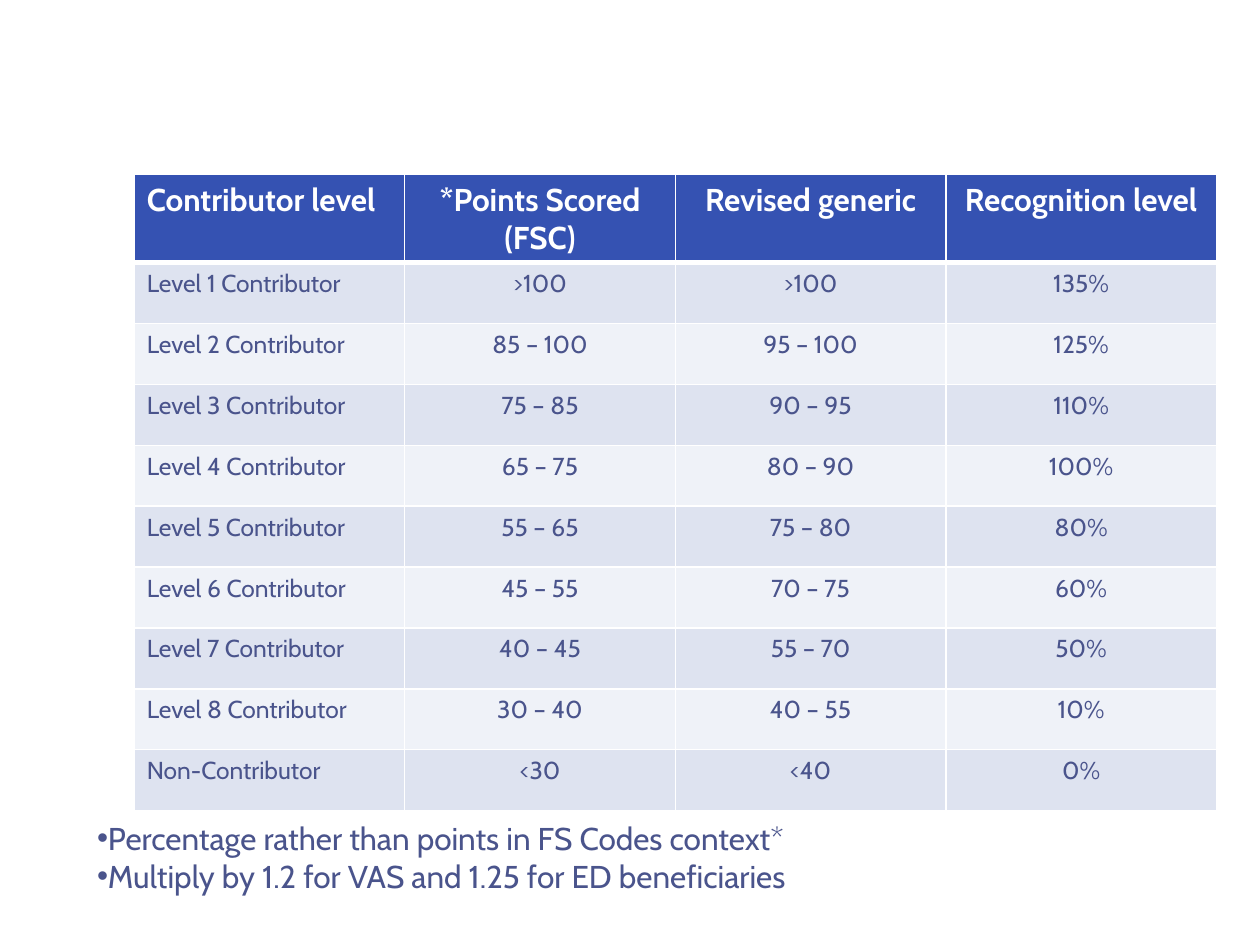
from dataclasses import dataclass

import pptx
import pptx.dml.color
import pptx.enum.text
import pptx.oxml
import pptx.oxml.ns
import pptx.util


@dataclass(frozen=True)
class Theme:
    font: str = "Cabin"
    header_fill: str = "3552B2"
    band_fills: tuple = ("DEE3F0", "EFF2F8")
    light: str = "FFFFFF"
    text: str = "4A548C"
    large: int = 18
    small: int = 14
    thin_line: int = 1
    thick_line: int = 3


HEADERS = ("Contributor level", "*Points Scored (FSC)", "Revised generic", "Recognition level")
LEVELS = (
    ("Level 1 Contributor", ">100", ">100", "135%"),
    ("Level 2 Contributor", "85 – 100", "95 – 100", "125%"),
    ("Level 3 Contributor", "75 – 85", "90 – 95", "110%"),
    ("Level 4 Contributor", "65 – 75", "80 – 90", "100%"),
    ("Level 5 Contributor", "55 – 65", "75 – 80", "80%"),
    ("Level 6 Contributor", "45 – 55", "70 – 75", "60%"),
    ("Level 7 Contributor", "40 – 45", "55 – 70", "50%"),
    ("Level 8 Contributor", "30 – 40", "40 – 55", "10%"),
    ("Non-Contributor", "<30", "<40", "0%"),
)
NOTES = (
    "Percentage rather than points in FS Codes context*",
    "Multiply by 1.2 for VAS and 1.25 for ED beneficiaries",
)


class SlideBuilder:
    """Places elements on a grid of 100 columns and 75 rows."""

    COLUMNS, ROWS = 100, 75

    def __init__(self, presentation, theme):
        self.theme = theme
        self.unit_x = presentation.slide_width / self.COLUMNS
        self.unit_y = presentation.slide_height / self.ROWS
        self.slide = presentation.slides.add_slide(presentation.slide_layouts[1])
        title = self.slide.shapes.title
        title.element.getparent().remove(title.element)

    def box(self, column, row, columns, rows):
        return (round(column * self.unit_x), round(row * self.unit_y),
                round(columns * self.unit_x), round(rows * self.unit_y))

    def style(self, paragraph, size, color, bold=False):
        paragraph.font.name = self.theme.font
        paragraph.font.size = pptx.util.Pt(size)
        paragraph.font.bold = bold
        paragraph.font.color.rgb = pptx.dml.color.RGBColor.from_string(color)

    def borders(self, cell, bottom):
        properties = cell._tc.get_or_add_tcPr()
        thin = self.theme.thin_line
        for side, width in (("L", thin), ("R", thin), ("T", thin), ("B", bottom)):
            properties.append(pptx.oxml.parse_xml(
                f'<a:ln{side} {pptx.oxml.ns.nsdecls("a")} w="{pptx.util.Pt(width)}">'
                f'<a:solidFill><a:srgbClr val="{self.theme.light}"/></a:solidFill></a:ln{side}>'))

    def cell(self, cell, text, fill, size, color, centered, header):
        theme = self.theme
        self.borders(cell, theme.thick_line if header else theme.thin_line)
        cell.fill.solid()
        cell.fill.fore_color.rgb = pptx.dml.color.RGBColor.from_string(fill)
        cell.text = text
        paragraph = cell.text_frame.paragraphs[0]
        if centered:
            paragraph.alignment = pptx.enum.text.PP_ALIGN.CENTER
        self.style(paragraph, size, color, header)

    def table(self, headers, records, area, header_rows):
        theme = self.theme
        rows = (headers, *records)
        left, top, width, height = self.box(*area)
        table = self.slide.shapes.add_table(
            len(rows), len(headers), left, top, width, height).table
        header_height = round(header_rows * self.unit_y)
        row_height = round((height - header_height) / len(records))
        for index, values in enumerate(rows):
            header = index == 0
            table.rows[index].height = header_height if header else row_height
            fill = theme.header_fill if header else theme.band_fills[(index - 1) % 2]
            size = theme.large if header else theme.small
            color = theme.light if header else theme.text
            for column, text in enumerate(values):
                self.cell(table.cell(index, column), text, fill, size, color, column > 0, header)

    def bullets(self, lines, area):
        body = self.slide.placeholders[1]
        body.left, body.top, body.width, body.height = self.box(*area)
        frame = body.text_frame
        frame.word_wrap = True
        frame.auto_size = pptx.enum.text.MSO_AUTO_SIZE.SHAPE_TO_FIT_TEXT
        frame.vertical_anchor = pptx.enum.text.MSO_ANCHOR.TOP
        frame.text = "\n".join(lines)
        for paragraph in frame.paragraphs:
            properties = paragraph._p.get_or_add_pPr()
            properties.set("marL", "0")
            properties.set("indent", "0")
            properties.append(pptx.oxml.parse_xml(
                f'<a:buChar {pptx.oxml.ns.nsdecls("a")} char="•"/>'))
            paragraph.space_before = pptx.util.Pt(0)
            self.style(paragraph, self.theme.large, self.theme.text)


def main():
    presentation = pptx.Presentation()
    presentation.slide_width = pptx.util.Inches(10)
    presentation.slide_height = pptx.util.Inches(7.5)
    builder = SlideBuilder(presentation, Theme())
    builder.table(HEADERS, LEVELS, area=(10.65, 13.85, 85.9, 50.5), header_rows=7)
    builder.bullets(NOTES, area=(6.7, 64.5, 63.4, 10.1))
    presentation.save("out.pptx")


if __name__ == "__main__":
    main()
